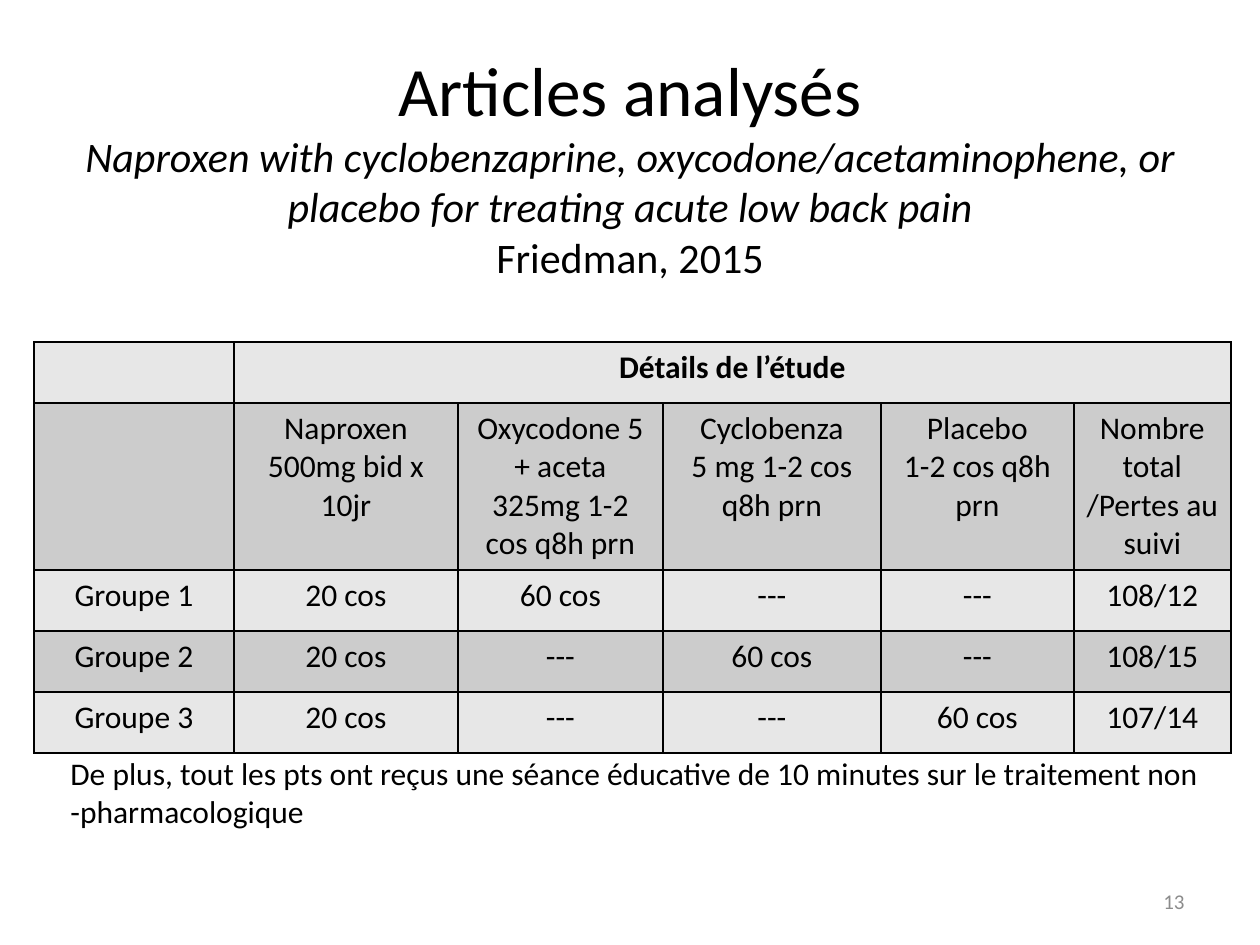
from typing import NamedTuple

from lxml.etree import SubElement
from pptx import Presentation
from pptx.dml.color import RGBColor
from pptx.enum.text import MSO_ANCHOR, MSO_AUTO_SIZE, PP_ALIGN
from pptx.oxml.ns import qn
from pptx.util import Emu, Pt

PX_PER_INCH = 126
FONT = "Calibri"
COLORS = {"text": "000000", "number": "8C8C8C", "light": "E7E7E7",
          "dark": "CCCCCC", "border": "000000"}


class Box(NamedTuple):
    left: int
    top: int
    width: int
    height: int


class TitleLine(NamedTuple):
    text: str
    size: float
    italic: bool = False


TITLE_BOX = Box(63, 38, 1134, 253)
TABLE_BOX = Box(34, 342, 1197, 411)
NOTE_BOX = Box(58, 748, 1202, 127)
NUMBER_BOX = Box(903, 876, 294, 50)

TITLE_LINES = [
    TitleLine("Articles analysés", 39.6),
    TitleLine("Naproxen with cyclobenzaprine, oxycodone/acetaminophene, "
              "or placebo for treating acute low back pain", 24, True),
    TitleLine("Friedman, 2015", 24),
]
COLUMN_WIDTHS = [200, 224, 205, 218, 193, 157]
ROW_HEIGHTS = [61, 167, 61, 61, 61]
ROWS = [
    ["", "Détails de l’étude", "", "", "", ""],
    ["", "Naproxen 500mg bid x 10jr", "Oxycodone 5 + aceta 325mg 1-2 cos q8h prn",
     "Cyclobenza\v5 mg 1-2 cos q8h prn", "Placebo\v1-2 cos q8h prn",
     "Nombre total /Pertes au suivi"],
    ["Groupe 1", "20 cos", "60 cos", "---", "---", "108/12"],
    ["Groupe 2", "20 cos", "---", "60 cos", "---", "108/15"],
    ["Groupe 3", "20 cos", "---", "---", "60 cos", "107/14"],
]
NOTE = ("De plus, tout les pts ont reçus une séance éducative de 10 minutes "
        "sur le traitement non -pharmacologique")


def px(n: int) -> Emu:
    return Emu(round(n * 914400 / PX_PER_INCH))


def emus(box: Box) -> list[Emu]:
    return [px(n) for n in box]


def style(font, size: float, color: str = "text", bold=False, italic=False) -> None:
    font.name = FONT
    font.size = Pt(size)
    font.bold = bold
    font.italic = italic
    font.color.rgb = RGBColor.from_string(COLORS[color])


def add_title(s) -> None:
    title = s.shapes.title
    title.left, title.top, title.width, title.height = emus(TITLE_BOX)
    tf = title.text_frame
    tf.vertical_anchor = MSO_ANCHOR.MIDDLE
    tf.auto_size = MSO_AUTO_SIZE.NONE
    tf.text = "\v".join(line.text for line in TITLE_LINES)
    p = tf.paragraphs[0]
    p.alignment = PP_ALIGN.CENTER
    for r, line in zip(p.runs, TITLE_LINES):
        style(r.font, line.size, italic=line.italic)


def add_text(s, box: Box, text: str, size: float, color: str = "text",
             align=PP_ALIGN.LEFT, anchor=MSO_ANCHOR.TOP) -> None:
    tf = s.shapes.add_textbox(*emus(box)).text_frame
    tf.word_wrap = True
    tf.vertical_anchor = anchor
    tf.text = text
    p = tf.paragraphs[0]
    p.alignment = align
    style(p.runs[0].font, size, color)


def add_borders(cell) -> None:
    tc_pr = cell._tc.get_or_add_tcPr()
    for side in ("a:lnL", "a:lnR", "a:lnT", "a:lnB"):
        ln = SubElement(tc_pr, qn(side), w=str(Pt(1)))
        fill = SubElement(ln, qn("a:solidFill"))
        SubElement(fill, qn("a:srgbClr"), val=COLORS["border"])


def fill_cell(cell, text: str, fill: str, bold: bool) -> None:
    add_borders(cell)
    cell.fill.solid()
    cell.fill.fore_color.rgb = RGBColor.from_string(COLORS[fill])
    cell.text = text
    p = cell.text_frame.paragraphs[0]
    p.alignment = PP_ALIGN.CENTER
    for r in p.runs:
        style(r.font, 18, bold=bold)


def add_study_table(s) -> None:
    table = s.shapes.add_table(len(ROWS), len(COLUMN_WIDTHS), *emus(TABLE_BOX)).table
    for column, width in zip(table.columns, COLUMN_WIDTHS):
        column.width = px(width)
    for i, (row, height) in enumerate(zip(table.rows, ROW_HEIGHTS)):
        row.height = px(height)
        for cell, text in zip(row.cells, ROWS[i]):
            fill_cell(cell, text, "dark" if i % 2 else "light", bold=i == 0)
    table.cell(0, 1).merge(table.cell(0, len(COLUMN_WIDTHS) - 1))


def main() -> None:
    prs = Presentation()
    prs.slide_width, prs.slide_height = px(1260), px(945)
    s = prs.slides.add_slide(prs.slide_layouts[5])
    add_title(s)
    add_study_table(s)
    add_text(s, NUMBER_BOX, "13", 12, "number", PP_ALIGN.RIGHT, MSO_ANCHOR.MIDDLE)
    add_text(s, NOTE_BOX, NOTE, 18)
    prs.save("out.pptx")


if __name__ == "__main__":
    main()
